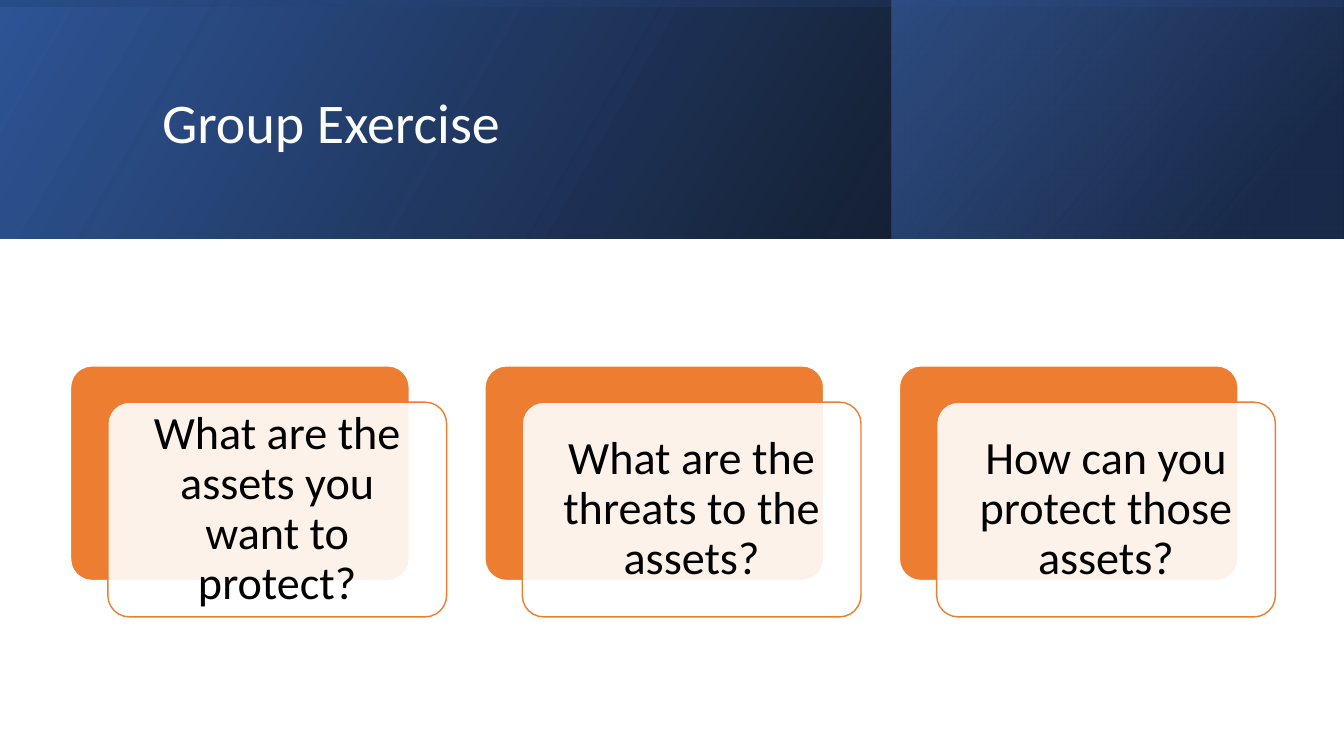
from pptx import Presentation
from pptx.dml.color import RGBColor
from pptx.enum.shapes import MSO_SHAPE
from pptx.enum.text import MSO_ANCHOR, PP_ALIGN
from pptx.oxml.ns import qn
from pptx.util import Inches, Pt
from lxml.etree import SubElement

BLACK = RGBColor(0x00, 0x00, 0x00)
WHITE = RGBColor(0xFF, 0xFF, 0xFF)
NAVY = RGBColor(0x20, 0x38, 0x64)
DEEP = RGBColor(0x2F, 0x55, 0x97)
BLUE = RGBColor(0x44, 0x72, 0xC4)
ORANGE = RGBColor(0xED, 0x7D, 0x31)

CARDS = [
    "What are the assets you want to protect?",
    "What are the threats to the assets?",
    "How can you protect those assets?",
]


def fade(tint, percent):
    SubElement(tint, qn("a:alpha")).set("val", str(percent * 1000))


def add_panel(slide, box, stops, angle, turn=0):
    panel = slide.shapes.add_shape(MSO_SHAPE.RECTANGLE, *map(Inches, box))
    panel.shadow.inherit = False
    panel.line.fill.background()
    panel.rotation = turn
    frame = panel._element.spPr
    frame.xfrm.set("flipH", "1")
    panel.fill.gradient()
    panel.fill.gradient_angle = 360 - angle
    for stop, (place, color, _) in zip(panel.fill.gradient_stops, stops):
        stop.position = place / 100
        stop.color.rgb = color
    tints = frame.find(qn("a:gradFill")).iter(qn("a:srgbClr"))
    for tint, (_, _, percent) in zip(tints, stops):
        fade(tint, percent)


def write(shape, text, size, color, align):
    frame = shape.text_frame
    frame.word_wrap = True
    frame.vertical_anchor = MSO_ANCHOR.MIDDLE
    para = frame.paragraphs[0]
    para.text = text
    para.alignment = align
    para.line_spacing = 0.9
    para.font.name = "Calibri"
    para.font.size = Pt(size)
    para.font.color.rgb = color


def add_header(slide, left, top, width, height):
    add_panel(slide, (left, top, width, height),
              [(0, BLACK, 96), (100, DEEP, 100)], 330)
    add_panel(slide, (left + 8.84, top, width - 8.85, height),
              [(19, NAVY, 68), (100, BLUE, 48)], 320)
    shift = (width - height) / 2
    add_panel(slide, (left + shift, top - shift, height, width),
              [(23, DEEP, 16), (99, BLACK, 45)], 350, 270)
    title = slide.shapes.add_textbox(
        Inches(left + 1.51), Inches(top + 0.38), Inches(10.63), Inches(1.72))
    write(title, "Group Exercise", 40, WHITE, PP_ALIGN.LEFT)


def add_plate(slide, left, top, width, height, fill, edge):
    plate = slide.shapes.add_shape(
        MSO_SHAPE.ROUNDED_RECTANGLE,
        Inches(left), Inches(top), Inches(width), Inches(height))
    plate.adjustments[0] = 0.1
    plate.shadow.inherit = False
    plate.fill.solid()
    plate.fill.fore_color.rgb = fill
    plate.line.color.rgb = edge
    plate.line.width = Pt(1)
    return plate


def add_card(slide, left, top, width, height, text):
    add_plate(slide, left, top, width, height, ORANGE, WHITE)
    front = add_plate(slide, left + 0.37, top + 0.36, width, height,
                      WHITE, ORANGE)
    fade(front._element.spPr.find(qn("a:solidFill"))[0], 90)
    frame = front.text_frame
    frame.margin_left = frame.margin_right = Inches(0.14)
    frame.margin_top = frame.margin_bottom = Inches(0.14)
    write(front, text, 33, BLACK, PP_ALIGN.CENTER)


def add_cards(slide, left, top, width, height, pitch):
    for index, text in enumerate(CARDS):
        add_card(slide, left + index * pitch, top, width, height, text)


def main():
    deck = Presentation()
    deck.slide_width = Inches(13.33)
    deck.slide_height = Inches(7.5)
    slide = deck.slides.add_slide(deck.slide_layouts[6])
    add_header(slide, 0, 0, 13.33, 2.37)
    add_cards(slide, 0.7, 3.63, 3.36, 2.13, 4.11)
    deck.save("out.pptx")


if __name__ == "__main__":
    main()
